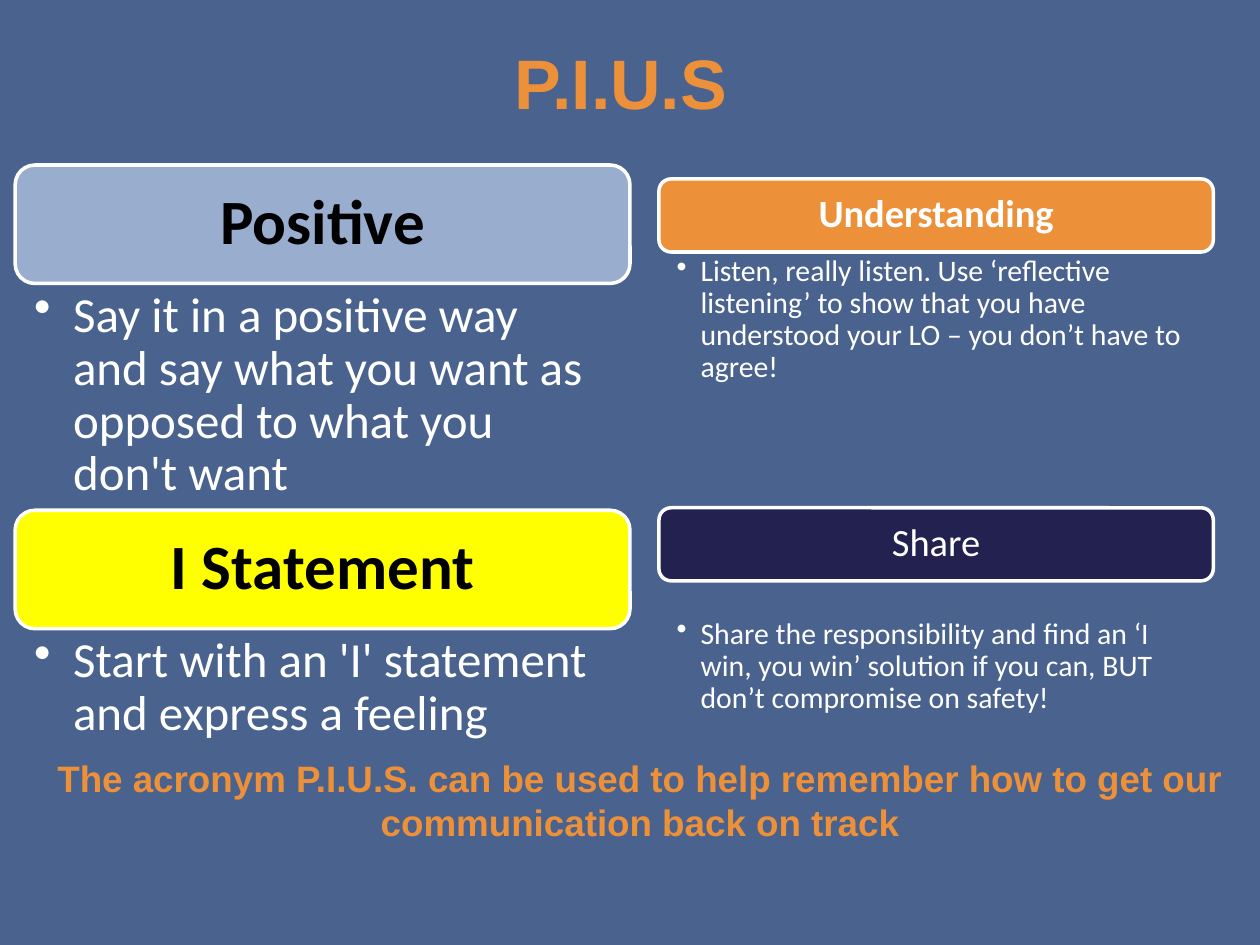
from pptx import Presentation
from pptx.dml.color import RGBColor
from pptx.enum.shapes import MSO_SHAPE
from pptx.enum.text import MSO_ANCHOR, PP_ALIGN
from pptx.oxml.ns import qn
from pptx.util import Inches, Pt
from lxml import etree

ROUNDED = MSO_SHAPE.ROUNDED_RECTANGLE
MIDDLE, TOP = MSO_ANCHOR.MIDDLE, MSO_ANCHOR.TOP
CENTER, LEFT = PP_ALIGN.CENTER, PP_ALIGN.LEFT

COLORS = {
    "background": "49628E",
    "orange": "EC9039",
    "blue": "99AECF",
    "yellow": "FFFF00",
    "navy": "232150",
    "white": "FFFFFF",
    "black": "000000",
}

# Each column: left, width, heading height, heading size, body size, bullet indent
LEFT_COLUMN = (0.12, 4.88, 0.94, 36, 28, 0.31)
RIGHT_COLUMN = (5.23, 4.4, 0.58, 22, 17, 0.19)

# Each card: column, heading top, heading, fill, font colour, bold,
# body top, body height, body insets, body text
CARDS = [
    (LEFT_COLUMN, 1.31, "Positive", "blue", "black", True,
     2.26, 1.79, (0.15, 0.04, 0.22, 0.04),
     "Say it in a positive way and say what you want as opposed to what you don't want"),
    (LEFT_COLUMN, 4.05, "I Statement", "yellow", "black", True,
     4.99, 0.96, (0.15, 0.05, 0.28, 0.05),
     "Start with an 'I' statement and express a feeling"),
    (RIGHT_COLUMN, 1.42, "Understanding", "orange", "white", True,
     2, 1.37, (0.14, 0.03, 0.17, 0.03),
     "Listen, really listen. Use ‘reflective listening’ to show that you have "
     "understood your LO – you don’t have to agree!"),
    (RIGHT_COLUMN, 4.03, "Share", "navy", "white", False,
     4.88, 0.8, (0.14, 0.03, 0.17, 0.03),
     "Share the responsibility and find an ‘I win, you win’ solution if you can, "
     "BUT don’t compromise on safety!"),
]


def color(name):
    return RGBColor.from_string(COLORS[name])


def write(shape, text, size, font_color, font="Calibri", bold=False,
          align=CENTER, anchor=MIDDLE, insets=(0.1, 0.05, 0.1, 0.05)):
    """Set the text of a shape and return its paragraph."""
    frame = shape.text_frame
    frame.text = text
    frame.word_wrap = True
    frame.vertical_anchor = anchor
    (frame.margin_left, frame.margin_top,
     frame.margin_right, frame.margin_bottom) = map(Inches, insets)
    paragraph = frame.paragraphs[0]
    paragraph.alignment = align
    span = paragraph.runs[0]
    span.font.name = font
    span.font.size = Pt(size)
    span.font.bold = bold
    span.font.color.rgb = color(font_color)
    return paragraph


def add_text(page, left, top, width, height, text, size, font_color, **style):
    box = page.shapes.add_textbox(*map(Inches, (left, top, width, height)))
    return write(box, text, size, font_color, **style)


def add_heading(page, left, top, width, height, text, size, fill, font_color, bold):
    shape = page.shapes.add_shape(ROUNDED, *map(Inches, (left, top, width, height)))
    shape.shadow.inherit = False
    shape.fill.solid()
    shape.fill.fore_color.rgb = color(fill)
    shape.line.color.rgb = color("white")
    shape.line.width = Pt(2)
    paragraph = write(shape, text, size, font_color, bold=bold)
    paragraph.line_spacing = 0.9


def add_bullet(paragraph, indent):
    properties = paragraph._p.get_or_add_pPr()
    properties.set("marL", str(Inches(indent)))
    properties.set("indent", str(-Inches(indent)))
    etree.SubElement(properties, qn("a:buChar"), char="•")


def add_card(page, column, heading_top, heading, fill, font_color, bold,
             body_top, body_height, insets, body):
    left, width, heading_height, heading_size, body_size, indent = column
    add_heading(page, left, heading_top, width, heading_height, heading,
                heading_size, fill, font_color, bold)
    paragraph = add_text(page, left, body_top, width, body_height, body, body_size,
                         "white", align=LEFT, anchor=TOP, insets=insets)
    add_bullet(paragraph, indent)
    paragraph.line_spacing = 0.9


def main():
    deck = Presentation()
    deck.slide_width, deck.slide_height = Inches(10), Inches(7.5)
    page = deck.slides.add_slide(deck.slide_layouts[6])
    page.background.fill.solid()
    page.background.fill.fore_color.rgb = color("background")

    # Title
    add_text(page, 0.59, 0.25, 8.83, 0.8, "P.I.U.S ", 40, "orange",
             font="Arial", bold=True)

    # Four cards, one for each letter
    for card in CARDS:
        add_card(page, *card)

    # Closing line
    add_text(page, 0.2, 5.96, 9.76, 0.78,
             "The acronym P.I.U.S. can be used to help remember how to get our "
             "communication back on track", 21, "orange", font="Arial", bold=True,
             anchor=TOP, insets=(0.07, 0.04, 0.07, 0.04))

    deck.save("out.pptx")


if __name__ == "__main__":
    main()
